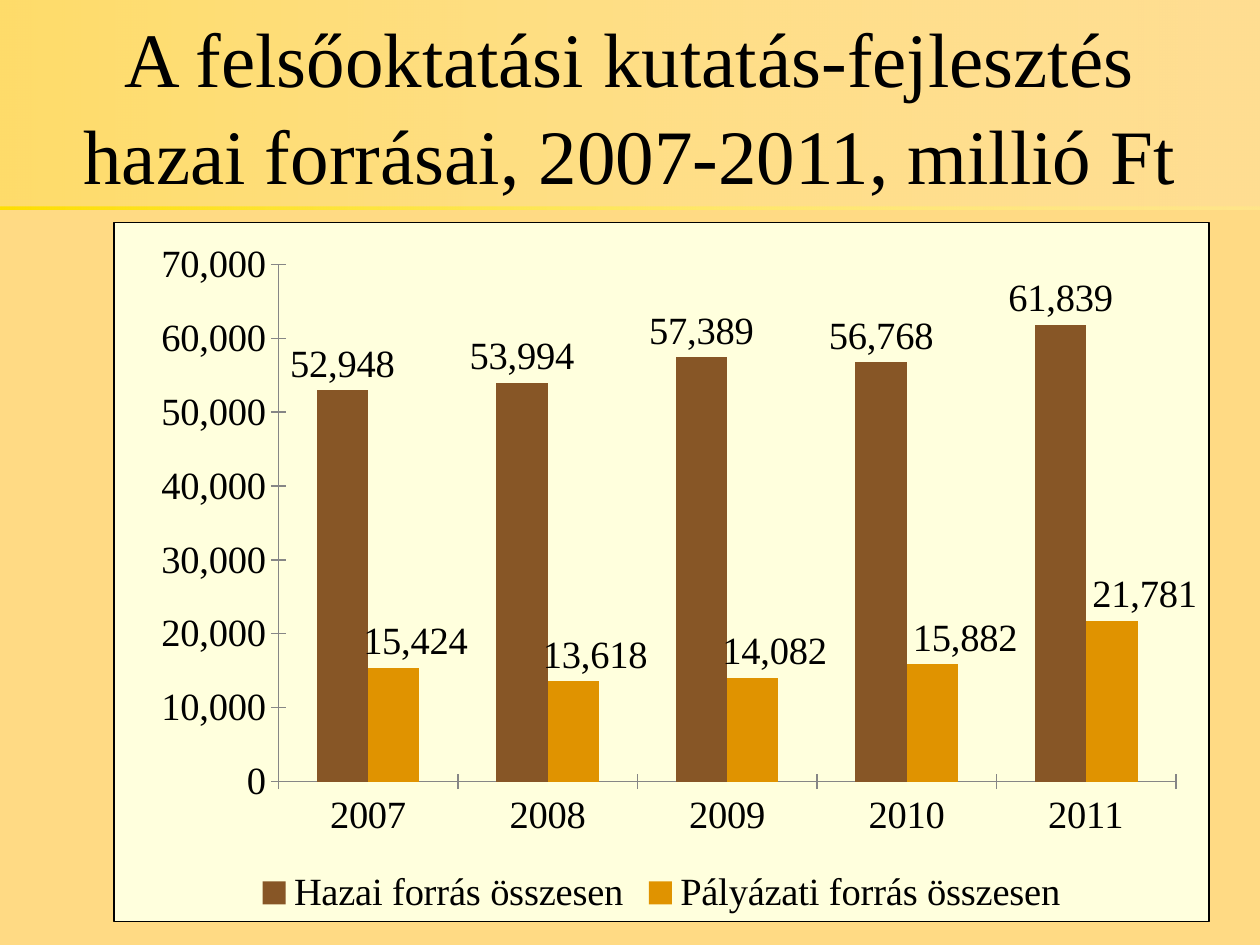
from dataclasses import dataclass

from lxml import etree
from pptx import Presentation
from pptx.chart.data import CategoryChartData
from pptx.dml.color import RGBColor
from pptx.enum.chart import XL_CHART_TYPE, XL_LABEL_POSITION, XL_LEGEND_POSITION, XL_TICK_MARK
from pptx.enum.shapes import MSO_SHAPE
from pptx.enum.text import MSO_ANCHOR, PP_ALIGN
from pptx.oxml import parse_xml
from pptx.oxml.ns import nsdecls, qn
from pptx.util import Pt

RECT = MSO_SHAPE.RECTANGLE
COLUMNS = XL_CHART_TYPE.COLUMN_CLUSTERED
OUTSIDE_END = XL_LABEL_POSITION.OUTSIDE_END
LEGEND_BOTTOM = XL_LEGEND_POSITION.BOTTOM
CROSS, NO_TICK = XL_TICK_MARK.CROSS, XL_TICK_MARK.NONE
BOTTOM, CENTER = MSO_ANCHOR.BOTTOM, PP_ALIGN.CENTER


@dataclass(frozen=True)
class Theme:
    font: str = "Times New Roman"
    title_size: int = 44
    chart_size: int = 22
    text: str = "000000"
    background: str = "FFDA84"
    band_start: str = "FEE002"
    band_end: str = "FFFF99"
    title_fill: str = "FFDB95"
    chart_fill: str = "FFFFDD"
    axis: str = "868686"
    series: tuple = ("875626", "E09300")


THEME = Theme()
TITLE = "A felsőoktatási kutatás-fejlesztés\vhazai forrásai, 2007-2011, millió Ft"
YEARS = ("2007", "2008", "2009", "2010", "2011")
FUNDING = {
    "Hazai forrás összesen": (52948, 53994, 57389, 56768, 61839),
    "Pályázati forrás összesen": (15424, 13618, 14082, 15882, 21781),
}
GRANT_LABEL_SHIFTS = (0.02, 0.02, 0.02, 0.03, 0.03)
PLOT_BOX = {"x": 0.15, "y": 0.06, "w": 0.82, "h": 0.74}
NUMBER_FORMAT = "#,##0"


def rgb(color):
    return RGBColor.from_string(color)


def set_alpha(color_element, percent):
    alpha = etree.SubElement(color_element, qn("a:alpha"))
    alpha.set("val", str(percent * 1000))


def style_font(font, size):
    font.name = THEME.font
    font.size = Pt(size)
    font.color.rgb = rgb(THEME.text)


def add_rect(s, left, top, width, height):
    sp = s.shapes.add_shape(RECT, Pt(left), Pt(top), Pt(width), Pt(height))
    sp.shadow.inherit = False
    sp.line.fill.background()
    return sp


def add_header(s, left, top, width, height):
    band = add_rect(s, left, top, width, height)
    band.fill.gradient()
    band.fill.gradient_angle = 0
    for stop, color in zip(band.fill.gradient_stops, (THEME.band_start, THEME.band_end)):
        stop.color.rgb = rgb(color)
    band_colors = list(band._element.spPr.iter(qn("a:srgbClr")))
    set_alpha(band_colors[-1], 30)

    sp = add_rect(s, left, top, width, height - 2)
    sp.fill.solid()
    sp.fill.fore_color.rgb = rgb(THEME.title_fill)
    set_alpha(next(sp._element.spPr.iter(qn("a:srgbClr"))), 71)
    tf = sp.text_frame
    tf.word_wrap = True
    tf.vertical_anchor = BOTTOM
    tf.text = TITLE
    p = tf.paragraphs[0]
    p.alignment = CENTER
    p.line_spacing = 1.05
    for r in p.runs:
        style_font(r.font, THEME.title_size)


def frame_chart(chart):
    chart._chartSpace.find(qn("c:chart")).addnext(parse_xml(
        f'<c:spPr {nsdecls("c", "a")}>'
        f'<a:solidFill><a:srgbClr val="{THEME.chart_fill}"/></a:solidFill>'
        f'<a:ln w="{Pt(0.75)}"><a:solidFill><a:srgbClr val="{THEME.text}"/></a:solidFill></a:ln>'
        '</c:spPr>'))


def layout_xml(values, target="", modes=""):
    parts = "".join(f'<c:{k} val="{v}"/>' for k, v in values.items())
    return parse_xml(f'<c:layout {nsdecls("c")}><c:manualLayout>{target}{modes}{parts}'
                     '</c:manualLayout></c:layout>')


def place_plot(chart):
    plot_area = chart._chartSpace.find(qn("c:chart")).find(qn("c:plotArea"))
    for old in plot_area.findall(qn("c:layout")):
        plot_area.remove(old)
    plot_area.insert(0, layout_xml(
        PLOT_BOX, '<c:layoutTarget val="inner"/>', '<c:xMode val="edge"/><c:yMode val="edge"/>'))


def style_axis(axis):
    axis.has_major_gridlines = False
    axis.major_tick_mark = CROSS
    axis.minor_tick_mark = NO_TICK
    axis.format.line.color.rgb = rgb(THEME.axis)
    axis.format.line.width = Pt(0.75)


def add_labels(series):
    labels = series.data_labels
    labels.show_value = True
    labels.number_format = NUMBER_FORMAT
    labels.number_format_is_linked = False
    labels.position = OUTSIDE_END
    style_font(labels.font, THEME.chart_size)


def shift_labels(series, shifts):
    for i, shift in enumerate(shifts):
        series.points[i].data_label.position = OUTSIDE_END
    for label, shift in zip(series._element.iter(qn("c:dLbl")), shifts):
        label.find(qn("c:idx")).addnext(layout_xml({"x": shift, "y": 0}))


def add_funding_chart(s, left, top, width, height):
    data = CategoryChartData(number_format=NUMBER_FORMAT)
    data.categories = YEARS
    for name, values in FUNDING.items():
        data.add_series(name, values)
    chart = s.shapes.add_chart(COLUMNS, Pt(left), Pt(top), Pt(width), Pt(height), data).chart
    style_font(chart.font, THEME.chart_size)
    chart.has_title = False
    frame_chart(chart)
    place_plot(chart)

    chart.has_legend = True
    chart.legend.position = LEGEND_BOTTOM
    chart.legend.include_in_layout = False

    style_axis(chart.category_axis)
    style_axis(chart.value_axis)
    chart.value_axis.minimum_scale = 0
    chart.value_axis.maximum_scale = 70000
    chart.value_axis.major_unit = 10000
    chart.value_axis.tick_labels.number_format = NUMBER_FORMAT
    chart.value_axis.tick_labels.number_format_is_linked = False

    plot = chart.plots[0]
    plot.vary_by_categories = False
    plot.gap_width = 150
    plot.overlap = 0
    for series, color in zip(plot.series, THEME.series):
        series.format.fill.solid()
        series.format.fill.fore_color.rgb = rgb(color)
        add_labels(series)
    shift_labels(plot.series[1], GRANT_LABEL_SHIFTS)


def main():
    prs = Presentation()
    prs.slide_width, prs.slide_height = Pt(720), Pt(540)
    s = prs.slides.add_slide(prs.slide_layouts[6])
    s.background.fill.solid()
    s.background.fill.fore_color.rgb = rgb(THEME.background)
    add_header(s, 0, 0, 720, 120)
    add_funding_chart(s, 64.8, 126.7, 626.4, 400.3)
    prs.save("out.pptx")


if __name__ == "__main__":
    main()
